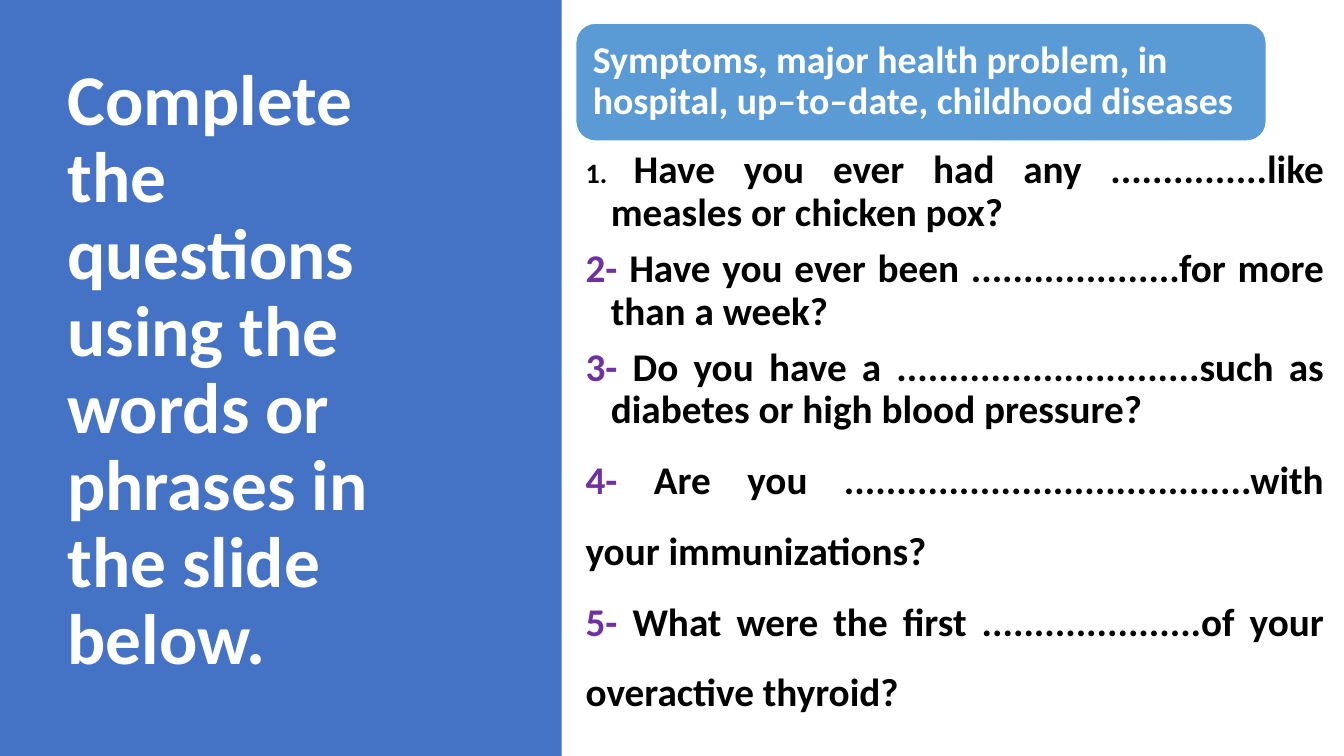
from dataclasses import dataclass

from pptx import Presentation
from pptx.dml.color import RGBColor
from pptx.enum.shapes import MSO_SHAPE
from pptx.enum.text import MSO_ANCHOR, MSO_AUTO_SIZE, PP_ALIGN
from pptx.util import Inches, Pt


@dataclass(frozen=True)
class Theme:
    font: str = "Calibri"
    panel: RGBColor = RGBColor(0x44, 0x72, 0xC4)
    banner: RGBColor = RGBColor(0x5B, 0x9B, 0xD5)
    white: RGBColor = RGBColor(0xFF, 0xFF, 0xFF)
    black: RGBColor = RGBColor(0, 0, 0)
    number: RGBColor = RGBColor(0x70, 0x30, 0xA0)
    title_size: int = 51
    banner_size: int = 27
    question_size: int = 28
    first_number_size: int = 20


THEME = Theme()

HANGING_QUESTIONS = [
    ("1. ", "Have you ever had any ...............like measles or chicken pox?"),
    ("2-", " Have you ever been ....................for more than a week?"),
    ("3-", " Do you have a .............................such as diabetes "
           "or high blood pressure?"),
]
WIDE_QUESTIONS = [
    ("4- ", "Are you .......................................with your immunizations?"),
    ("5- ", "What were the first .....................of your overactive thyroid?"),
]


def add_panel(shapes, kind, left, top, width, height, fill):
    panel = shapes.add_shape(kind, Inches(left), Inches(top), Inches(width), Inches(height))
    panel.shadow.inherit = False
    panel.fill.solid()
    panel.fill.fore_color.rgb = fill
    panel.line.fill.background()
    return panel


def add_text_box(shapes, left, top, width, height, anchor=MSO_ANCHOR.TOP):
    box = shapes.add_textbox(Inches(left), Inches(top), Inches(width), Inches(height))
    box.text_frame.word_wrap = True
    box.text_frame.vertical_anchor = anchor
    return box.text_frame


def style_run(span, size, color):
    span.font.name = THEME.font
    span.font.size = Pt(size)
    span.font.bold = True
    span.font.color.rgb = color


def add_heading(shapes, text, size, left, top, width, height):
    """White bold text, centred vertically in its box."""
    frame = add_text_box(shapes, left, top, width, height, MSO_ANCHOR.MIDDLE)
    frame.text = text
    para = frame.paragraphs[0]
    para.line_spacing = 0.9
    style_run(para.runs[0], size, THEME.white)
    return frame


def add_word_banner(page):
    group = page.shapes.add_group_shape()
    banner = add_panel(group.shapes, MSO_SHAPE.ROUNDED_RECTANGLE,
                       5.71, 0.23, 6.85, 1.17, THEME.banner)
    banner.line.color.rgb = THEME.white
    banner.line.width = Pt(1)
    frame = add_heading(
        group.shapes,
        "Symptoms, major health problem, in hospital, up–to–date, childhood diseases",
        THEME.banner_size, 5.77, 0.28, 6.74, 1.06)
    frame.margin_left = frame.margin_right = Inches(0.11)
    frame.margin_top = frame.margin_bottom = Inches(0.11)


def write_question(para, number, question, hanging):
    para.alignment = PP_ALIGN.JUSTIFY
    para.line_spacing = 0.9 if hanging else 1.5
    if hanging:
        properties = para._p.get_or_add_pPr()
        properties.set("marL", str(Inches(0.25)))
        properties.set("indent", str(Inches(-0.25)))
    for text, color in ((number, THEME.number), (question, THEME.black)):
        span = para.add_run()
        span.text = text
        style_run(span, THEME.question_size, color)


def add_questions(page):
    frame = add_text_box(page.shapes, 5.71, 1.44, 7.52, 6.2)
    frame.auto_size = MSO_AUTO_SIZE.SHAPE_TO_FIT_TEXT
    for index, (number, question) in enumerate(HANGING_QUESTIONS + WIDE_QUESTIONS):
        para = frame.add_paragraph() if index else frame.paragraphs[0]
        hanging = index < len(HANGING_QUESTIONS)
        write_question(para, number, question, hanging)
        if hanging and index:
            para.space_before = Pt(10)
    style_run(frame.paragraphs[0].runs[0], THEME.first_number_size, THEME.black)


def main():
    deck = Presentation()
    deck.slide_width, deck.slide_height = Inches(13.33), Inches(7.5)
    page = deck.slides.add_slide(deck.slide_layouts[6])
    add_panel(page.shapes, MSO_SHAPE.RECTANGLE, 0, 0, 5.57, 7.5, THEME.panel)
    add_heading(page.shapes,
                "Complete the questions using the words or phrases in the slide below.",
                THEME.title_size, 0.57, 0.68, 4.12, 6.02)
    add_word_banner(page)
    add_questions(page)
    deck.save("out.pptx")


if __name__ == "__main__":
    main()
